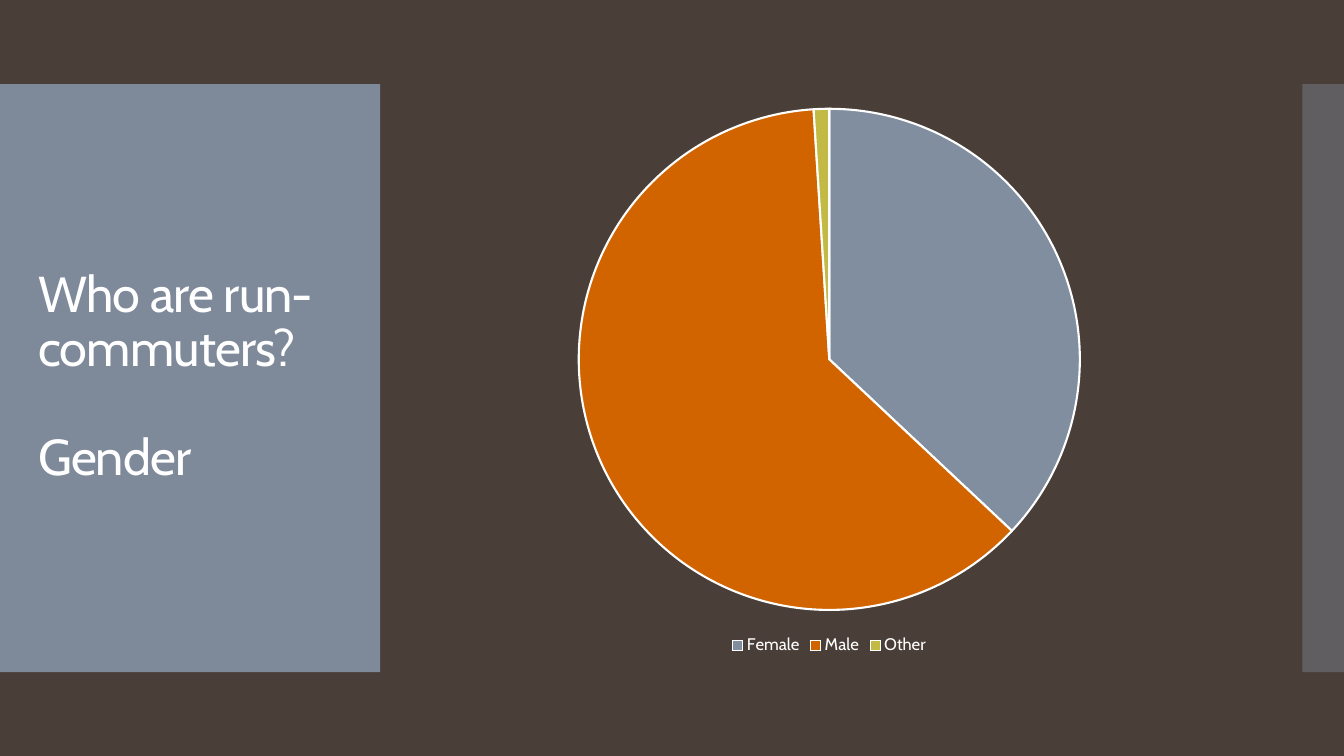
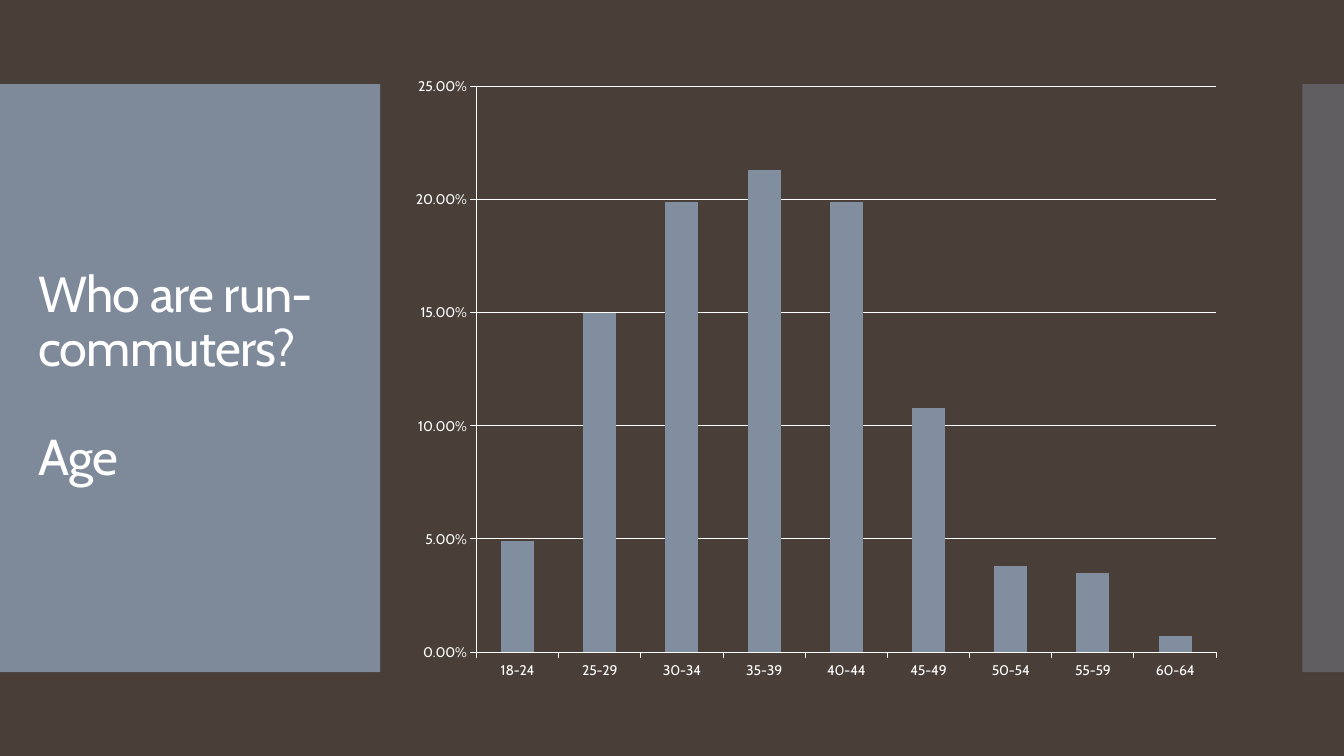
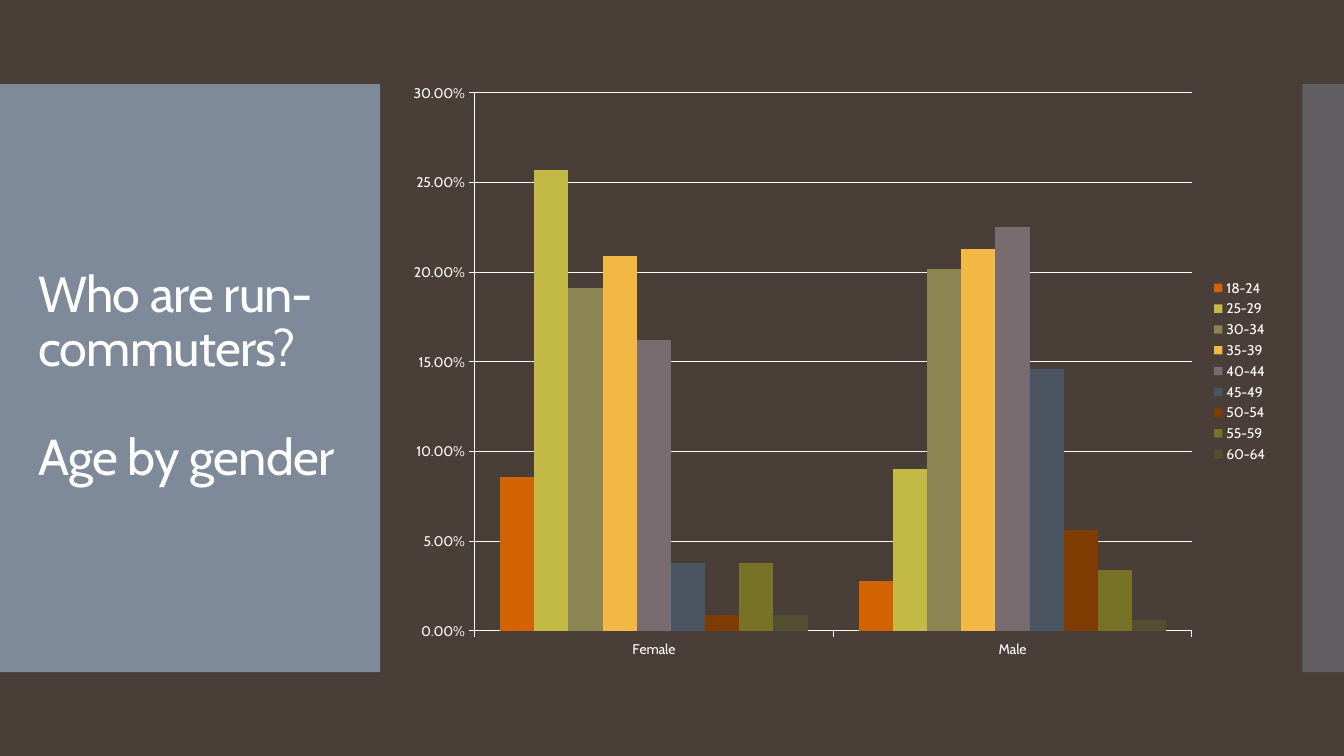
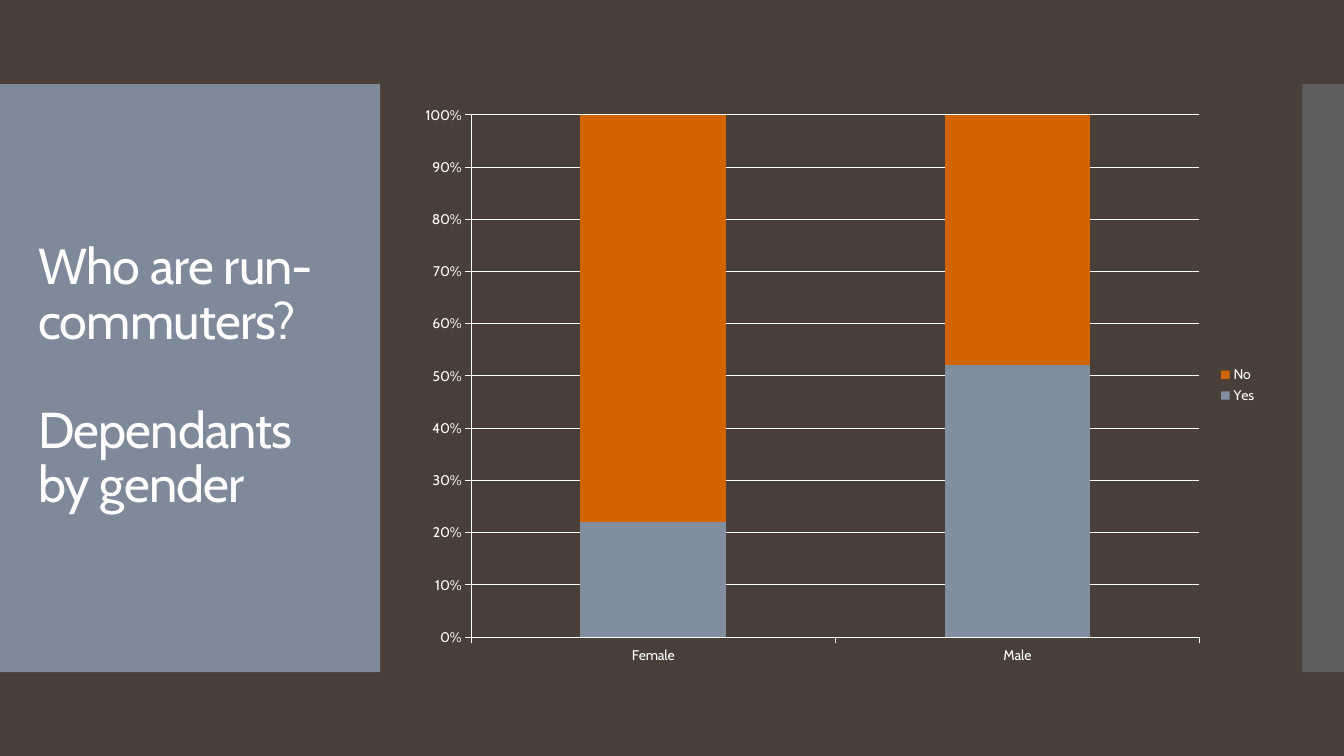
from pptx import Presentation
from pptx.chart.data import CategoryChartData
from pptx.dml.color import RGBColor
from pptx.enum.chart import XL_CHART_TYPE, XL_LEGEND_POSITION, XL_TICK_MARK
from pptx.enum.shapes import MSO_SHAPE
from pptx.enum.text import MSO_ANCHOR, MSO_AUTO_SIZE, PP_ALIGN
from pptx.oxml.ns import qn
from pptx.util import Cm, Pt
from lxml.etree import SubElement

# Shared style
FONT = "Cabin"
WHITE = RGBColor(0xFF, 0xFF, 0xFF)
BROWN = RGBColor(0x4A, 0x3F, 0x38)
SLATE = RGBColor(0x81, 0x8E, 0x9F)
ORANGE = RGBColor(0xD2, 0x64, 0x00)
LIME = RGBColor(0xC3, 0xBA, 0x45)
OLIVE = RGBColor(0x8A, 0x85, 0x52)
AMBER = RGBColor(0xF3, 0xB8, 0x43)
MAUVE = RGBColor(0x78, 0x6C, 0x71)
DARK_SLATE = RGBColor(0x4B, 0x55, 0x62)
RUST = RGBColor(0x7E, 0x3C, 0x00)
DARK_LIME = RGBColor(0x78, 0x72, 0x27)
DARK_OLIVE = RGBColor(0x53, 0x50, 0x31)

SLIDE_WIDTH, SLIDE_HEIGHT = Cm(33.87), Cm(19.05)
BAND_TOP, BAND_HEIGHT = Cm(2.12), Cm(14.82)
BANDS = [(Cm(0), Cm(9.58), 95), (Cm(32.82), Cm(1.05), 40)]  # left, width, opacity %
TITLE_BOX = (Cm(0.71), Cm(3.13), Cm(8.18), Cm(12.77))

# Content
QUESTION = "Who are run-commuters?"
GENDERS = ["Female", "Male"]
AGES = ["18-24", "25-29", "30-34", "35-39", "40-44", "45-49", "50-54", "55-59", "60-64"]
AGE_COLORS = [ORANGE, LIME, OLIVE, AMBER, MAUVE, DARK_SLATE, RUST, DARK_LIME, DARK_OLIVE]
FEMALE_AGES = [0.086, 0.257, 0.191, 0.209, 0.162, 0.038, 0.009, 0.038, 0.009]
MALE_AGES = [0.028, 0.09, 0.202, 0.213, 0.225, 0.146, 0.056, 0.034, 0.006]

# Each series is (name, values, colour); a pie gives one colour per slice
TOPICS = [
    dict(topic="Gender", kind=XL_CHART_TYPE.PIE,
         box=(Cm(10.74), Cm(2.39), Cm(20.32), Cm(14.22)),
         categories=GENDERS + ["Other"],
         series=[("Series 1", [37, 62, 1], [SLATE, ORANGE, LIME])],
         legend=XL_LEGEND_POSITION.BOTTOM, legend_size=12),
    dict(topic="Age", kind=XL_CHART_TYPE.COLUMN_CLUSTERED,
         box=(Cm(10.06), Cm(1.65), Cm(21.01), Cm(15.77)),
         categories=AGES,
         series=[("Series 1",
                  [0.049, 0.15, 0.199, 0.213, 0.199, 0.108, 0.038, 0.035, 0.007], SLATE)],
         top=0.25),
    dict(topic="Age by gender", kind=XL_CHART_TYPE.COLUMN_CLUSTERED,
         box=(Cm(9.98), Cm(1.83), Cm(22.23), Cm(15.04)),
         categories=GENDERS,
         series=list(zip(AGES, zip(FEMALE_AGES, MALE_AGES), AGE_COLORS)),
         legend=XL_LEGEND_POSITION.RIGHT, top=0.3),
    dict(topic="Dependants by gender", kind=XL_CHART_TYPE.COLUMN_STACKED_100,
         box=(Cm(10.29), Cm(2.39), Cm(21.64), Cm(14.63)),
         categories=GENDERS,
         series=[("Yes", [22, 52], SLATE), ("No", [78, 48], ORANGE)],
         legend=XL_LEGEND_POSITION.RIGHT, number_format="0%"),
]


def style_font(font, size, color=WHITE):
    font.name, font.size, font.bold = FONT, Pt(size), False
    font.color.rgb = color


def write_text(frame, paragraphs, size=36, gap=39, line_spacing=0.9, tracking=-0.6):
    """Fill a text frame; gap is the space in points between paragraphs."""
    for i, text in enumerate(paragraphs):
        paragraph = frame.add_paragraph() if i else frame.paragraphs[0]
        paragraph.alignment = PP_ALIGN.LEFT
        paragraph.line_spacing = line_spacing
        paragraph.space_before = Pt(gap if i else 0)
        run = paragraph.add_run()
        run.text = text
        style_font(run.font, size)
        run.font._element.set("spc", str(round(tracking * 100)))


def style_layout(layout):
    """Set the shared background and title box."""
    layout.background.fill.solid()
    layout.background.fill.fore_color.rgb = BROWN
    title = layout.placeholders[0]
    title.left, title.top, title.width, title.height = TITLE_BOX
    title.text_frame.vertical_anchor = MSO_ANCHOR.MIDDLE
    title.text_frame.auto_size = MSO_AUTO_SIZE.NONE
    title.text_frame.word_wrap = True


def move_bands_to_layout(slide, layout):
    """Draw the side bands, then hand them to the layout so all slides share them."""
    for i, (left, width, opacity) in enumerate(BANDS):
        band = slide.shapes.add_shape(
            MSO_SHAPE.RECTANGLE, left, BAND_TOP, width, BAND_HEIGHT)
        band.shadow.inherit = False
        band.line.fill.background()
        band.fill.solid()
        band.fill.fore_color.rgb = SLATE
        color = band.element.spPr.find(qn("a:solidFill")).find(qn("a:srgbClr"))
        SubElement(color, qn("a:alpha")).set("val", str(opacity * 1000))
        band.element.nvSpPr.cNvPr.set("id", str(100 + i))
        layout.shapes.element.insert(2 + i, band.element)


def style_axes(chart, number_format="0.00%", top=None):
    for axis in (chart.category_axis, chart.value_axis):
        axis.major_tick_mark = XL_TICK_MARK.OUTSIDE
        axis.minor_tick_mark = XL_TICK_MARK.NONE
        style_font(axis.tick_labels.font, 10)
        axis.format.line.color.rgb = WHITE
        axis.format.line.width = Pt(0.75)
    values = chart.value_axis
    values.has_major_gridlines = True
    values.major_gridlines.format.line.color.rgb = WHITE
    values.major_gridlines.format.line.width = Pt(0.75)
    values.tick_labels.number_format = number_format
    values.tick_labels.number_format_is_linked = False
    if top:
        values.minimum_scale, values.maximum_scale, values.major_unit = 0, top, 0.05


def add_topic_chart(slide, kind, box, categories, series, legend=None, legend_size=10,
                    **axis_format):
    data = CategoryChartData()
    data.categories = categories
    for name, values, _ in series:
        data.add_series(name, values)
    chart = slide.shapes.add_chart(kind, *box, data).chart
    chart.has_title = False
    style_font(chart.font, 10)

    chart.has_legend = legend is not None
    if chart.has_legend:
        chart.legend.position = legend
        chart.legend.include_in_layout = False
        style_font(chart.legend.font, legend_size)

    plot = chart.plots[0]
    if kind == XL_CHART_TYPE.PIE:
        plot.vary_by_categories = True
        for i, color in enumerate(series[0][2]):
            piece = plot.series[0].points[i].format
            piece.fill.solid()
            piece.fill.fore_color.rgb = color
            piece.line.color.rgb = WHITE
            piece.line.width = Pt(1.5)
        return

    plot.vary_by_categories = False
    plot.gap_width = 150
    for bars, (_, _, color) in zip(plot.series, series):
        bars.invert_if_negative = False
        bars.format.fill.solid()
        bars.format.fill.fore_color.rgb = color
    style_axes(chart, **axis_format)


def main():
    deck = Presentation()
    deck.slide_width, deck.slide_height = SLIDE_WIDTH, SLIDE_HEIGHT
    layout = deck.slide_layouts.get_by_name("Title Only")
    style_layout(layout)
    for number, content in enumerate(TOPICS):
        slide = deck.slides.add_slide(layout)
        if number == 0:
            move_bands_to_layout(slide, layout)
        chart_content = {key: part for key, part in content.items() if key != "topic"}
        write_text(slide.shapes.title.text_frame, [QUESTION, content["topic"]])
        add_topic_chart(slide, **chart_content)
    deck.save("out.pptx")


if __name__ == "__main__":
    main()
